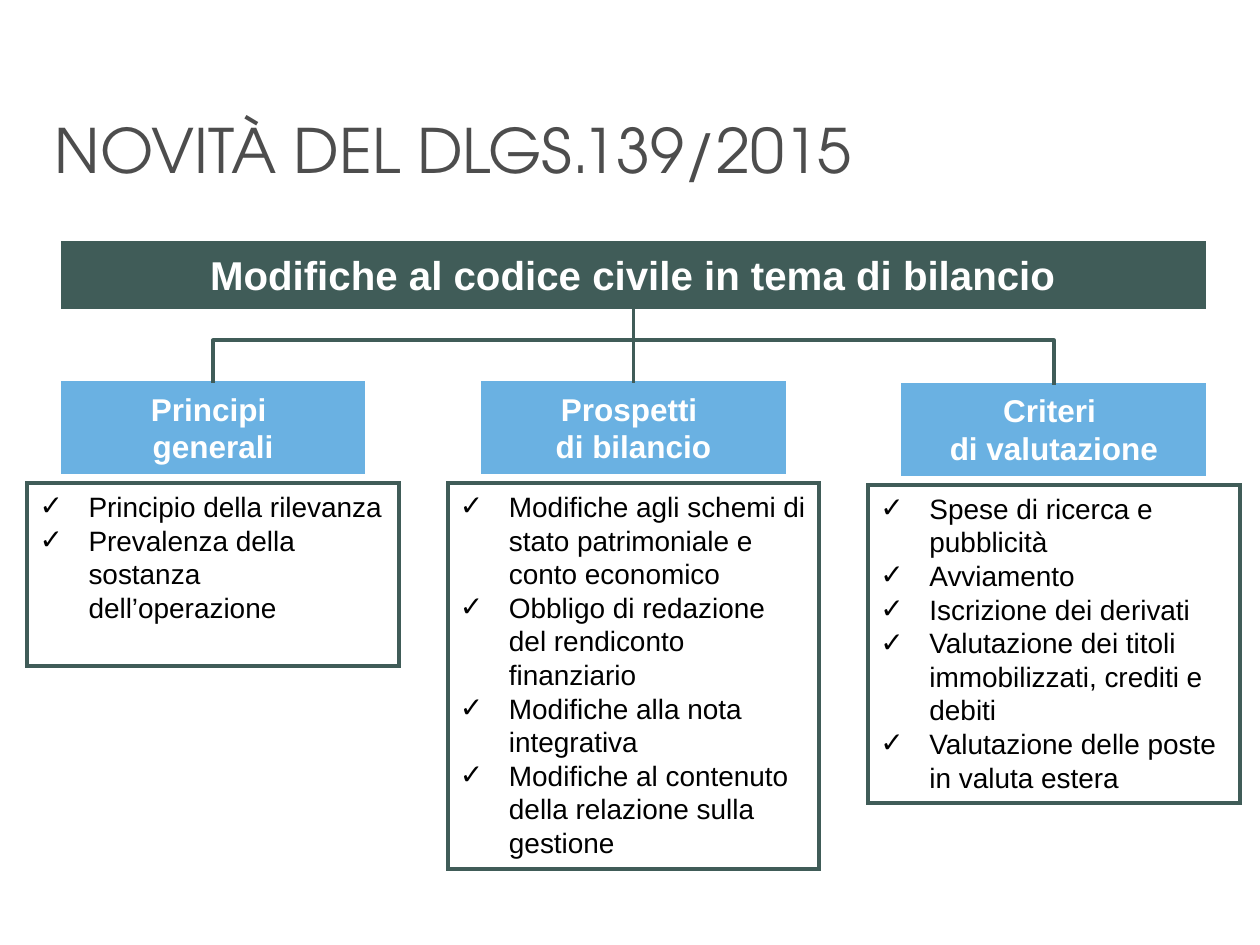
from lxml import etree
from pptx import Presentation
from pptx import util as u
from pptx.dml.color import RGBColor
from pptx.enum import shapes as sh, text as tx
from pptx.oxml.ns import qn

DARK, BLUE, WHITE, BLACK, GREY = "405C58", "6AB1E2", "FFFFFF", "000000", "4D4D4D"
LEFT, WIDE = 35.75, 652.5
HEAD_W, HEAD_H = 172, 51
LIST_W = 212.5
GAP = 6.5
MID = LEFT + WIDE / 2
BAR_TOP, BAR_H = 138.75, 36.5
FORK = 194.5

# heading, top of heading, height of list, points
COLS = [
    ("Principi \ngenerali", 218.75, 104.5, [
        "Principio della rilevanza",
        "Prevalenza della sostanza dell’operazione"]),
    ("Prospetti \ndi bilancio", 218.75, 220.5, [
        "Modifiche agli schemi di stato patrimoniale e conto economico",
        "Obbligo di redazione del rendiconto finanziario",
        "Modifiche alla nota integrativa",
        "Modifiche al contenuto della relazione sulla gestione"]),
    ("Criteri \ndi valutazione", 219.75, 181.5, [
        "Spese di ricerca e pubblicità",
        "Avviamento",
        "Iscrizione dei derivati",
        "Valutazione dei titoli immobilizzati, crediti e debiti",
        "Valutazione delle poste in valuta estera"]),
]


def rgb(code):
    return RGBColor.from_string(code)


def write(shape, lines, size, color, font="Arial", bold=False, tick=False,
          align=tx.PP_ALIGN.LEFT, anchor=tx.MSO_ANCHOR.TOP, space=1.0):
    """Fill a shape with one paragraph per line."""
    frame = shape.text_frame
    frame.word_wrap = True
    frame.auto_size = tx.MSO_AUTO_SIZE.NONE
    frame.vertical_anchor = anchor
    for i, line in enumerate(lines):
        par = frame.add_paragraph() if i else frame.paragraphs[0]
        par.text = line
        par.alignment = align
        par.line_spacing = space
        for run in par.runs:
            run.font.name = font
            run.font.size = u.Pt(size)
            run.font.bold = bold
            run.font.color.rgb = rgb(color)
        if tick:
            add_tick(par)


def add_tick(par):
    props = par._p.get_or_add_pPr()
    props.set("marL", str(u.Pt(28)))
    props.set("indent", str(u.Pt(-28)))
    etree.SubElement(props, qn("a:buFont")).set("typeface", "Arial")
    etree.SubElement(props, qn("a:buChar")).set("char", "✓")


def add_box(slide, x, y, w, h, line, fill=None):
    box = slide.shapes.add_shape(
        sh.MSO_SHAPE.RECTANGLE, u.Pt(x), u.Pt(y), u.Pt(w), u.Pt(h))
    box.shadow.inherit = False
    if fill:
        box.fill.solid()
        box.fill.fore_color.rgb = rgb(fill)
    else:
        box.fill.background()
    box.line.color.rgb = rgb(line)
    box.line.width = u.Pt(2.25)
    edge = box._element.spPr.find(qn("a:ln"))
    etree.SubElement(edge, qn("a:miter")).set("lim", "800000")
    return box


def add_label(slide, x, y, w, h, label, size, fill):
    box = add_box(slide, x, y, w, h, fill, fill)
    write(box, [label], size, WHITE, bold=True,
          align=tx.PP_ALIGN.CENTER, anchor=tx.MSO_ANCHOR.MIDDLE)


def add_link(slide, x1, y1, x2, y2):
    """Join two points, straight down or with one corner above the end."""
    link = slide.shapes.add_connector(
        sh.MSO_CONNECTOR.STRAIGHT, u.Pt(x1), u.Pt(y1), u.Pt(x2), u.Pt(y2))
    link.line.color.rgb = rgb(DARK)
    link.line.width = u.Pt(2.25)
    props = link._element.spPr
    if x1 != x2:
        props.find(qn("a:prstGeom")).set("prst", "bentConnector2")
    etree.SubElement(props, qn("a:effectLst"))


def add_title(slide, label):
    title = slide.shapes.title
    title.left, title.top = u.Pt(24), u.Pt(65.5)
    title.width, title.height = u.Pt(678), u.Pt(96.5)
    write(title, [label], 35, GREY, font="TeX Gyre Adventor", space=0.9)


def main():
    deck = Presentation()
    deck.slide_width, deck.slide_height = u.Pt(720), u.Pt(540)
    slide = deck.slides.add_slide(deck.slide_layouts[5])
    add_title(slide, "NOVITÀ DEL DLGS.139/2015")
    add_label(slide, LEFT, BAR_TOP, WIDE, BAR_H,
              "Modifiche al codice civile in tema di bilancio", 23, DARK)

    step = (WIDE - HEAD_W) / 2
    for i, (head, top, high, points) in enumerate(COLS):
        x = LEFT + i * step
        mid = x + HEAD_W / 2
        add_label(slide, x, top, HEAD_W, HEAD_H, head, 18, BLUE)
        box = add_box(slide, mid - LIST_W / 2, top + HEAD_H + GAP,
                      LIST_W, high, DARK)
        write(box, points, 16, BLACK, tick=True)
        start = BAR_TOP + BAR_H if mid == MID else FORK
        add_link(slide, MID, start, mid, top)

    deck.save("out.pptx")


if __name__ == "__main__":
    main()
